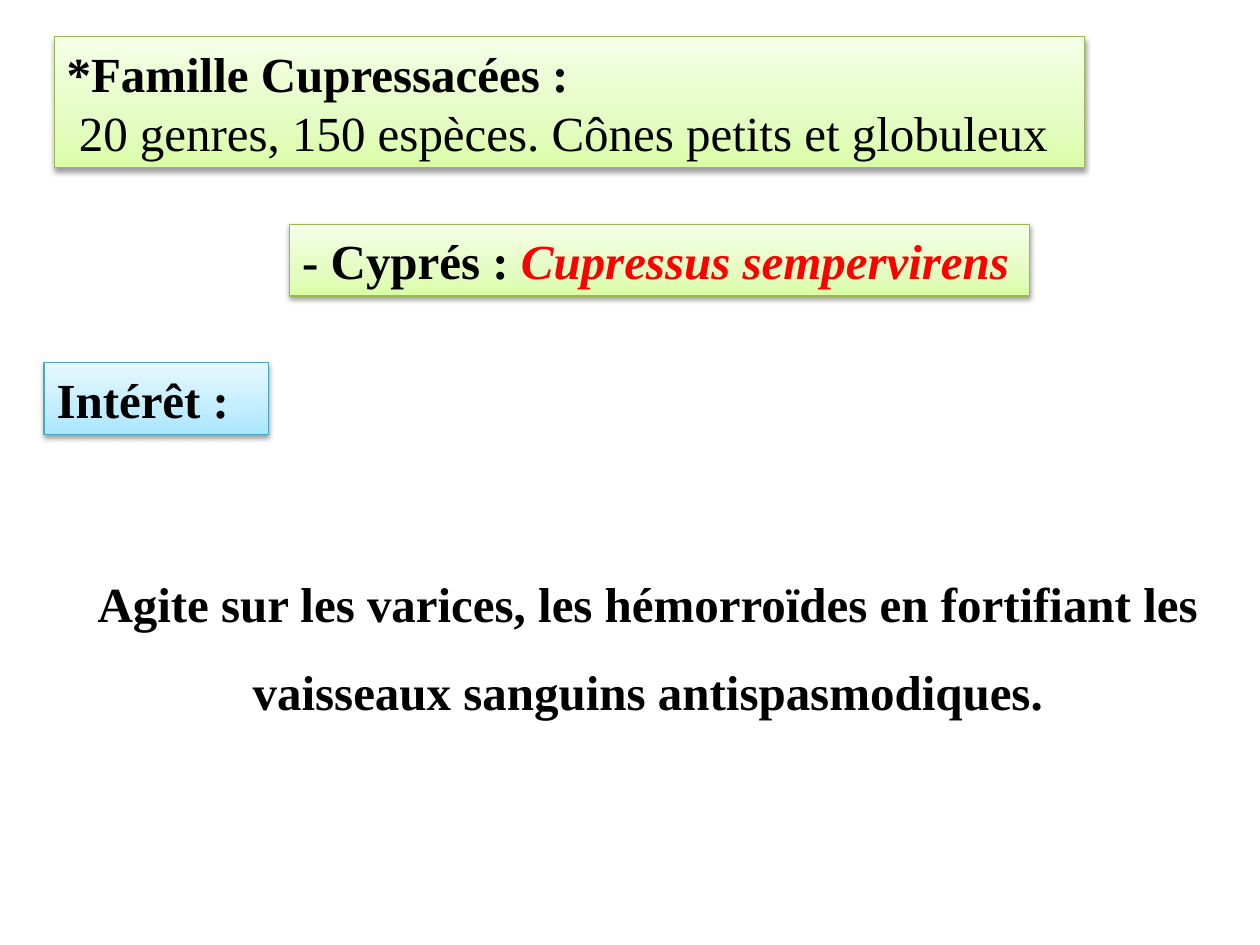
import pptx
import pptx.dml.color
import pptx.enum.shapes
import pptx.enum.text
import pptx.oxml
import pptx.oxml.ns
import pptx.util

Inches = pptx.util.Inches
ALIGN = pptx.enum.text.PP_ALIGN
ANCHOR = pptx.enum.text.MSO_ANCHOR

THEME = {
    "font": "Times New Roman",
    "size": 28,
    "ink": "000000",
    "species": "FF0000",
    # Gradient stops run from the bottom edge to the top edge
    "green": {"stops": [(0, "DAFDA7"), (35, "E4FCC2"), (100, "F5FFE7")], "line": "98B955"},
    "blue": {"stops": [(0, "A7E6FF"), (35, "C1EDFF"), (100, "E7F8FF")], "line": "46AAC5"},
}

# Content: each paragraph is a list of (text, run format) pairs
FAMILY = [
    [("*Famille Cupressacées :", {})],
    [(" ", {}), ("20 genres, 150 espèces. Cônes petits et globuleux ", {"bold": False})],
]
SPECIES = [[("- Cyprés : ", {}),
            ("Cupressus sempervirens", {"italic": True, "color": THEME["species"]})]]
INTEREST = [[("Intérêt :  ", {})]]
EFFECT = [[("Agite sur les varices, les hémorroïdes en fortifiant les "
            "vaisseaux sanguins antispasmodiques.", {})]]

LABELS = [
    (FAMILY, (0.43, 0.29, 8.18, 1.04), "green", ANCHOR.MIDDLE),
    (SPECIES, (2.3, 1.78, 5.87, 0.57), "green", ANCHOR.MIDDLE),
    (INTEREST, (0.35, 2.88, 1.78, 0.57), "blue", ANCHOR.TOP),
]
EFFECT_AREA = (0.28, 4.3, 9.72, 1.43)


def rgb(value):
    return pptx.dml.color.RGBColor.from_string(value)


def write_text(holder, paragraphs, align=ALIGN.JUSTIFY, anchor=ANCHOR.MIDDLE,
               wrap=False, spacing=None):
    frame = holder.text_frame
    frame.word_wrap = wrap
    frame.auto_size = pptx.enum.text.MSO_AUTO_SIZE.SHAPE_TO_FIT_TEXT
    frame.vertical_anchor = anchor
    for index, pieces in enumerate(paragraphs):
        paragraph = frame.add_paragraph() if index else frame.paragraphs[0]
        paragraph.alignment = align
        paragraph.line_spacing = spacing
        for text, style in pieces:
            run = paragraph.add_run()
            run.text = text
            run.font.name = THEME["font"]
            run.font.size = pptx.util.Pt(THEME["size"])
            run.font.bold = style.get("bold", True)
            run.font.italic = style.get("italic", False)
            run.font.color.rgb = rgb(style.get("color", THEME["ink"]))


def drawing_xml(tag, attributes, body):
    namespace = pptx.oxml.ns.nsdecls("a")
    return pptx.oxml.parse_xml(f"<a:{tag} {namespace} {attributes}>{body}</a:{tag}>")


def add_label(slide, area, palette):
    label = slide.shapes.add_shape(
        pptx.enum.shapes.MSO_SHAPE.RECTANGLE, *map(Inches, area))
    label.line.color.rgb = rgb(palette["line"])
    label.line.width = pptx.util.Pt(0.75)

    # Three-stop vertical gradient
    label.fill.gradient()
    label.fill.gradient_angle = 90
    stop_list = label.element.spPr.find(".//" + pptx.oxml.ns.qn("a:gsLst"))
    stop_list.clear()
    for position, color in palette["stops"]:
        stop_list.append(drawing_xml(
            "gs", f'pos="{position * 1000}"', f'<a:srgbClr val="{color}"/>'))

    # Soft shadow straight below
    label.shadow.inherit = False
    effects = label.element.spPr.find(pptx.oxml.ns.qn("a:effectLst"))
    blur, distance = pptx.util.Pt(3.1), pptx.util.Pt(1.6)
    effects.append(drawing_xml(
        "outerShdw",
        f'blurRad="{blur}" dist="{distance}" dir="5400000" rotWithShape="0"',
        '<a:srgbClr val="000000"><a:alpha val="38000"/></a:srgbClr>'))
    return label


def main():
    deck = pptx.Presentation()
    deck.slide_width, deck.slide_height = Inches(10), Inches(7.5)
    slide = deck.slides.add_slide(deck.slide_layouts[6])

    # Family, species and interest labels
    for paragraphs, area, palette, anchor in LABELS:
        write_text(add_label(slide, area, THEME[palette]), paragraphs, anchor=anchor)

    # Medicinal effect
    effect = slide.shapes.add_textbox(*map(Inches, EFFECT_AREA))
    write_text(effect, EFFECT, align=ALIGN.CENTER, wrap=True, spacing=1.5)

    deck.save("out.pptx")


if __name__ == "__main__":
    main()
